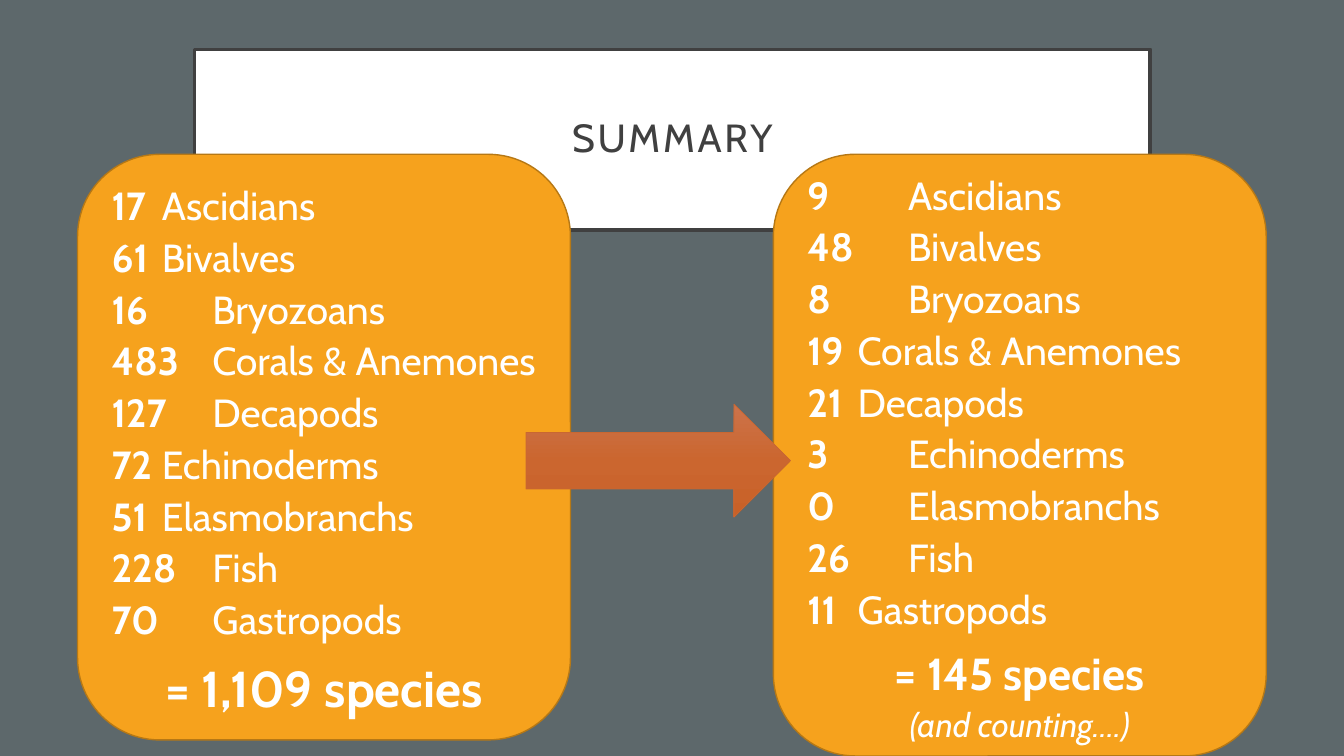
from copy import deepcopy

from pptx import Presentation, util as u
from pptx.dml.color import RGBColor
from pptx.enum import shapes, text
from pptx.oxml.ns import qn
from lxml import etree

# Content: (count, group, tab stop in points)
NEAR, FAR = 36, 72
TITLE = "SUMMARY"
PANELS = [
    {
        "box": (55.4, 110.2, 352.1, 418.3),
        "groups": [
            ("17", "Ascidians", NEAR), ("61", "Bivalves", NEAR),
            ("16", "Bryozoans", FAR), ("483", "Corals & Anemones", FAR),
            ("127", "Decapods", FAR), ("72", "Echinoderms", NEAR),
            ("51", "Elasmobranchs", NEAR), ("228", "Fish", FAR),
            ("70", "Gastropods", FAR),
        ],
        # (text, size, bold, italic)
        "totals": [("= 1,109 species", 36, True, False)],
    },
    {
        "box": (552.4, 110.2, 352.1, 429.8),
        "groups": [
            ("9", "Ascidians", FAR), ("48", "Bivalves", FAR),
            ("8", "Bryozoans", FAR), ("19", "Corals & Anemones", NEAR),
            ("21", "Decapods", NEAR), ("3", "Echinoderms", FAR),
            ("0", "Elasmobranchs", FAR), ("26", "Fish", FAR),
            ("11", "Gastropods", NEAR),
        ],
        "totals": [("= 145 species", 32, True, False),
                   ("(and counting….)", 24, False, True)],
    },
]
TITLE_BOX = (139, 35.3, 682.6, 129)
ARROW_BOX = (375.8, 288.7, 188.9, 80.8)
COLORS = {
    "background": "5D686B", "white": "FFFFFF", "dark": "404040",
    "panel": "F6A21D", "panel_line": "B67815", "arrow_line": "C96731",
}
ARROW_STOPS = [(0, "CC734B"), (50, "CB662F"), (100, "C86128")]
FONT = "Cabin"


def rgb(name):
    return RGBColor.from_string(COLORS[name])


def add_box(slide, kind, box, fill, line, line_width):
    shape = slide.shapes.add_shape(kind, *[u.Pt(value) for value in box])
    shape.shadow.inherit = False
    if fill:
        shape.fill.solid()
        shape.fill.fore_color.rgb = rgb(fill)
    shape.line.color.rgb = rgb(line)
    shape.line.width = u.Pt(line_width)
    shape.text_frame.word_wrap = True
    shape.text_frame.vertical_anchor = text.MSO_ANCHOR.MIDDLE
    return shape


def style_run(run, size, color, bold=False, italic=False):
    run.font.name = FONT
    run.font.size = u.Pt(size)
    run.font.color.rgb = rgb(color)
    run.font.bold = bold
    run.font.italic = italic


def add_tab_stop(paragraph, position):
    properties = paragraph._p.get_or_add_pPr()
    tabs = etree.SubElement(properties, qn("a:tabLst"))
    etree.SubElement(tabs, qn("a:tab"), pos=str(u.Pt(position)), algn="l")


def add_panel(slide, panel):
    shape = add_box(slide, shapes.MSO_SHAPE.ROUNDED_RECTANGLE, panel["box"],
                    "panel", "panel_line", 1)
    frame = shape.text_frame
    lines = [f"{count}\t{group}" for count, group, _ in panel["groups"]]
    lines += [total[0] for total in panel["totals"]]
    frame.text = "\n".join(lines)
    for paragraph in frame.paragraphs:
        paragraph.line_spacing = 1.1

    # Bold count, then the group name at its tab stop
    group_count = len(panel["groups"])
    group_paragraphs = frame.paragraphs[:group_count]
    for paragraph, (count, group, stop) in zip(group_paragraphs, panel["groups"]):
        paragraph.alignment = text.PP_ALIGN.LEFT
        if paragraph is group_paragraphs[-1]:
            paragraph.space_after = u.Pt(6)
        add_tab_stop(paragraph, stop)
        paragraph.runs[0].text = count
        paragraph.add_run().text = f"\t{group}"
        for run, bold in zip(paragraph.runs, (True, False)):
            style_run(run, 28, "white", bold)

    # Totals
    for paragraph, (_, size, bold, italic) in zip(
            frame.paragraphs[group_count:], panel["totals"]):
        paragraph.alignment = text.PP_ALIGN.CENTER
        style_run(paragraph.runs[0], size, "white", bold, italic)


def add_title(slide):
    shape = add_box(slide, shapes.MSO_SHAPE.RECTANGLE, TITLE_BOX,
                    "white", "dark", 2.5)
    shape.text_frame.text = TITLE
    paragraph = shape.text_frame.paragraphs[0]
    paragraph.alignment = text.PP_ALIGN.CENTER
    paragraph.line_spacing = 0.9
    style_run(paragraph.runs[0], 28, "dark")
    paragraph.runs[0]._r.get_or_add_rPr().set("spc", "200")


def add_arrow(slide):
    arrow = add_box(slide, shapes.MSO_SHAPE.RIGHT_ARROW, ARROW_BOX,
                    None, "arrow_line", 0.5)
    arrow.fill.gradient()
    arrow.fill.gradient_angle = 270
    stop_list = arrow._element.spPr.find(qn("a:gradFill")).find(qn("a:gsLst"))
    stop_list.insert(1, deepcopy(stop_list[0]))
    for stop, (position, color) in zip(arrow.fill.gradient_stops, ARROW_STOPS):
        stop.position = position / 100
        stop.color.rgb = RGBColor.from_string(color)


def main():
    presentation = Presentation()
    presentation.slide_width = u.Pt(960)
    presentation.slide_height = u.Pt(540)
    slide = presentation.slides.add_slide(presentation.slide_layouts[6])
    slide.background.fill.solid()
    slide.background.fill.fore_color.rgb = rgb("background")

    add_title(slide)
    for panel in PANELS:
        add_panel(slide, panel)
    add_arrow(slide)
    presentation.save("out.pptx")


if __name__ == "__main__":
    main()
